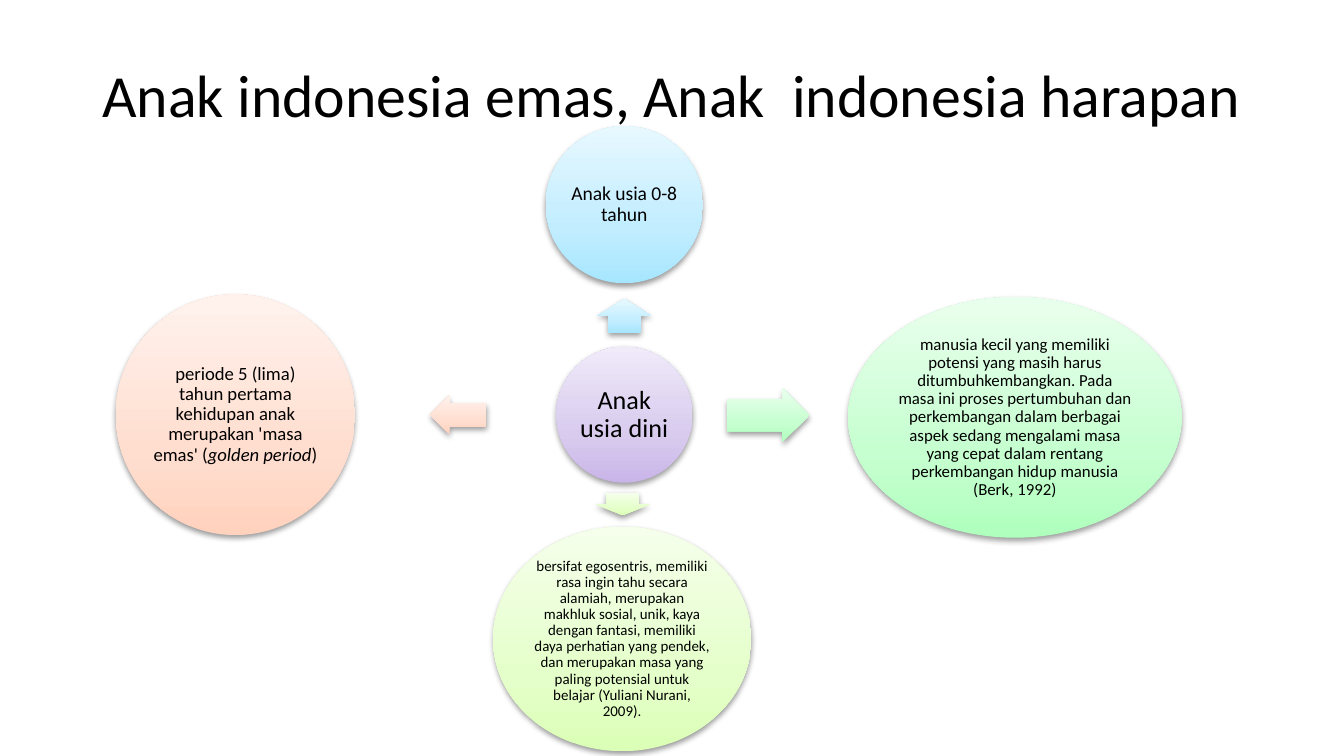
from dataclasses import dataclass

from pptx import Presentation
from pptx.dml.color import RGBColor
from pptx.enum.shapes import MSO_SHAPE
from pptx.enum.text import MSO_ANCHOR, PP_ALIGN
from pptx.oxml import parse_xml
from pptx.oxml.ns import nsdecls
from pptx.util import Cm, Pt

FONT = "Calibri"
INK = "000000"

# Gradient stops from bottom to top
VIOLET = ("C9B5E8", "D8CBEE", "F0EAF9")
BLUE = ("A7E6FF", "C1EDFF", "E7F8FF")
GREEN = ("AFFFBD", "C6FFD0", "E9FFED")
LIME = ("DBFFB6", "E5FFCB", "F5FFEB")
PEACH = ("FFD2BD", "FFDED0", "FFF2ED")
STOPS = (0, 35, 100)


@dataclass
class Box:
    """Centre and size in centimetres, turned clockwise in degrees."""
    x: float
    y: float
    w: float
    h: float
    turn: int = 0


@dataclass
class Bubble:
    box: Box
    tones: tuple[str, ...]
    size: float
    inset: float
    runs: tuple[str, ...]  # every second run is italic
    arrow: Box | None = None


BUBBLES = [
    Bubble(Box(11.8, 7.84, 2.57, 2.57), VIOLET, 14, 0.05, ("Anak usia dini",)),
    Bubble(Box(11.8, 3.87, 2.97, 2.97), BLUE, 10.5, 0.05,
           ("Anak usia 0-8 tahun",), Box(11.8, 5.97, 0.64, 1.02, 270)),
    Bubble(Box(19.18, 7.89, 6.3, 4.55), GREEN, 9, 0.03,
           ("manusia kecil yang memiliki potensi yang masih harus "
            "ditumbuhkembangkan. Pada masa ini proses pertumbuhan dan "
            "perkembangan dalam berbagai aspek sedang mengalami masa yang "
            "cepat dalam rentang perkembangan hidup manusia (Berk, 1992)",),
           Box(14.52, 7.85, 1.55, 1.02)),
    Bubble(Box(11.76, 12.08, 4.88, 4.24), LIME, 8, 0.03,
           ("bersifat egosentris, memiliki rasa ingin tahu secara alamiah, "
            "merupakan makhluk sosial, unik, kaya dengan fantasi, memiliki "
            "daya perhatian yang pendek, dan merupakan masa yang paling "
            "potensial untuk belajar (Yuliani Nurani, 2009).",),
           Box(11.77, 9.53, 0.43, 1.02, 90)),
    Bubble(Box(4.45, 7.84, 4.52, 4.55), PEACH, 10, 0.03,
           ("periode 5 (lima) tahun pertama kehidupan anak merupakan "
            "'masa emas' (", "golden period", ") "),
           Box(8.66, 7.84, 1.07, 0.74, 180)),
]


def tint(code: str) -> RGBColor:
    return RGBColor.from_string(code)


def style(par, size: float) -> None:
    par.alignment = PP_ALIGN.CENTER
    par.font.name = FONT
    par.font.size = Pt(size)
    par.font.color.rgb = tint(INK)


def glow(shape, tones: tuple[str, ...]) -> None:
    """Give the shape its upright gradient and soft shadow, without a line."""
    stops = "".join(
        f'<a:gs pos="{pos * 1000}"><a:srgbClr val="{tint(tone)}"/></a:gs>'
        for pos, tone in zip(STOPS, tones))
    props = shape._element.spPr
    props.append(parse_xml(
        f'<a:gradFill {nsdecls("a")} rotWithShape="0"><a:gsLst>{stops}</a:gsLst>'
        '<a:lin ang="16200000" scaled="0"/></a:gradFill>'))
    shape.line.fill.background()
    props.append(parse_xml(
        f'<a:effectLst {nsdecls("a")}><a:outerShdw blurRad="40000" dist="20000" '
        'dir="5400000" rotWithShape="0"><a:srgbClr val="000000">'
        '<a:alpha val="38000"/></a:srgbClr></a:outerShdw></a:effectLst>'))


def draw(slide, kind: MSO_SHAPE, box: Box, tones: tuple[str, ...]):
    shape = slide.shapes.add_shape(
        kind, Cm(box.x - box.w / 2), Cm(box.y - box.h / 2), Cm(box.w), Cm(box.h))
    shape.rotation = box.turn
    glow(shape, tones)
    return shape


def add_bubble(slide, item: Bubble) -> None:
    if item.arrow:
        arrow = draw(slide, MSO_SHAPE.RIGHT_ARROW, item.arrow, item.tones)
        arrow.adjustments[0] = 0.6
        arrow.adjustments[1] = 0.5
    frame = draw(slide, MSO_SHAPE.OVAL, item.box, item.tones).text_frame
    frame.word_wrap = True
    frame.vertical_anchor = MSO_ANCHOR.MIDDLE
    frame.margin_left = frame.margin_right = Cm(item.inset)
    frame.margin_top = frame.margin_bottom = Cm(item.inset)
    par = frame.paragraphs[0]
    style(par, item.size)
    par.line_spacing = 0.9
    for i, text in enumerate(item.runs):
        run = par.add_run()
        run.text = text
        if i % 2:
            run.font.italic = True


def add_title(slide, text: str) -> None:
    title = slide.shapes.title
    title.left, title.top = Cm(1.27), Cm(0.58)
    title.width, title.height = Cm(22.86), Cm(2.39)
    frame = title.text_frame
    frame.text = text
    frame.vertical_anchor = MSO_ANCHOR.MIDDLE
    style(frame.paragraphs[0], 32)


def main() -> None:
    deck = Presentation()
    deck.slide_width, deck.slide_height = Cm(25.4), Cm(14.29)
    slide = deck.slides.add_slide(deck.slide_layouts[5])
    add_title(slide, "Anak indonesia emas, Anak  indonesia harapan")
    for item in BUBBLES:
        add_bubble(slide, item)
    deck.save("out.pptx")


if __name__ == "__main__":
    main()
